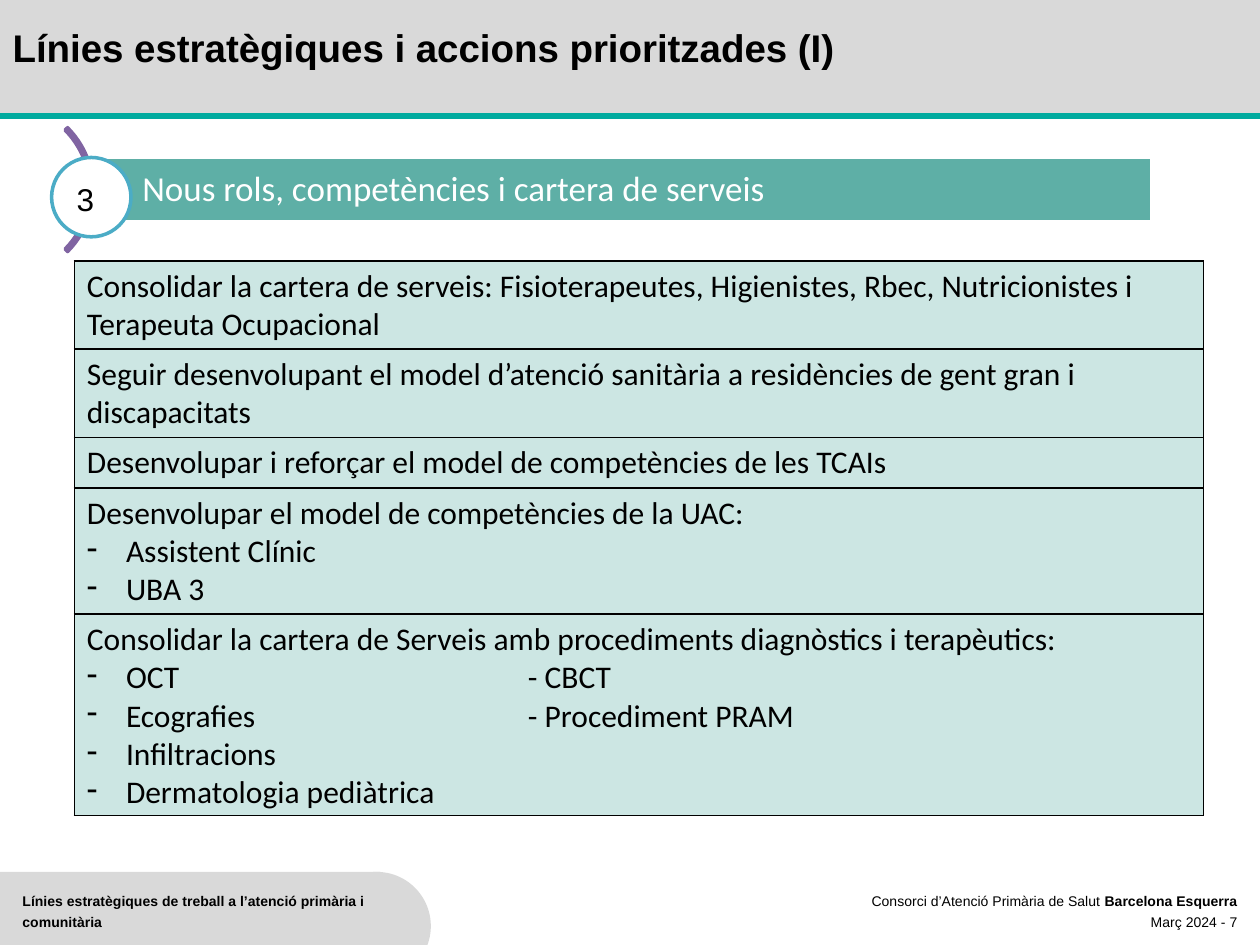
from lxml import etree
from pptx import Presentation
from pptx import util as u
from pptx.dml.color import RGBColor
from pptx.enum import shapes, text
from pptx.oxml import ns

BLACK = RGBColor(0x00, 0x00, 0x00)
WHITE = RGBColor(0xFF, 0xFF, 0xFF)
GREY = RGBColor(0xD9, 0xD9, 0xD9)
TEAL = RGBColor(0x00, 0xAA, 0x9E)
BAND = RGBColor(0x5E, 0xAF, 0xA6)
MINT = RGBColor(0xCC, 0xE6, 0xE3)
PURPLE = RGBColor(0x80, 0x64, 0xA2)
BLUE = RGBColor(0x4B, 0xAC, 0xC6)

deck = Presentation()
deck.slide_width, deck.slide_height = u.Inches(10), u.Inches(7.5)
COL, ROW = deck.slide_width / 100, deck.slide_height / 75
slide = deck.slides.add_slide(deck.slide_layouts[5])


def place(left, top, width, height):
    return int(left * COL), int(top * ROW), int(width * COL), int(height * ROW)


def write(paragraph, words, size, font="Arial", color=BLACK, bold=False):
    run = paragraph.add_run()
    run.text = words
    for name, value in {"name": font, "size": u.Pt(size), "bold": bold}.items():
        setattr(run.font, name, value)
    run.font.color.rgb = color


KIND = shapes.MSO_SHAPE
drawn = []
for kind, area, fill, edge in [
    (KIND.RECTANGLE, (0, 69.2, 30.2, 7.2), GREY, None),
    (KIND.OVAL, (25.6, 69.2, 8.6, 8.6), GREY, None),
    (KIND.RECTANGLE, (0, 0, 100, 9.2), GREY, None),
    (KIND.BLOCK_ARC, (-6.5, 8.1, 13.9, 13.9), None, PURPLE),
    (KIND.RECTANGLE, (7.2, 12.5, 84.2, 5.1), BAND, WHITE),
    (KIND.OVAL, (4.1, 12.5, 6.3, 6.3), WHITE, BLUE),
]:
    piece = slide.shapes.add_shape(kind, *place(*area))
    piece.shadow.inherit = False
    if fill is None:
        piece.fill.background()
    else:
        piece.fill.solid()
        piece.fill.fore_color.rgb = fill
    if edge is None:
        piece.line.fill.background()
    else:
        piece.line.color.rgb = edge
        piece.line.width = u.Pt(2)
    drawn.append(piece)

arc, band = drawn[3:5]
for index, amount in enumerate((189, 27, 0.02)):
    arc.adjustments[index] = amount

heading = band.text_frame
for name, value in {"margin_left": int(4.1 * COL), "margin_right": int(0.6 * COL),
                    "margin_top": int(0.6 * ROW), "margin_bottom": int(0.6 * ROW),
                    "vertical_anchor": text.MSO_ANCHOR.MIDDLE}.items():
    setattr(heading, name, value)
heading.paragraphs[0].alignment = text.PP_ALIGN.LEFT
heading.paragraphs[0].line_spacing = 0.9
write(heading.paragraphs[0], "Nous rols, competències i cartera de serveis", 20, "Calibri", WHITE)

rule = slide.shapes.add_connector(shapes.MSO_CONNECTOR.STRAIGHT, 0, int(9.2 * ROW),
                                  deck.slide_width, int(9.2 * ROW))
rule.line.color.rgb = TEAL
rule.line.width = u.Pt(3)
etree.SubElement(rule._element.spPr, ns.qn("a:effectLst"))

title = slide.shapes.title
slide.shapes._spTree.append(title._element)
title.left, title.top, title.width, title.height = place(0, 2, 85.3, 7.2)
title.text_frame.vertical_anchor = text.MSO_ANCHOR.TOP
title.text_frame.auto_size = text.MSO_AUTO_SIZE.NONE
title_line = title.text_frame.paragraphs[0]
title_line.alignment = text.PP_ALIGN.LEFT
title_line.line_spacing = u.Pt(22)
write(title_line, "Línies estratègiques i accions prioritzades (I)", 22, bold=True)

LEFT, RIGHT = text.PP_ALIGN.LEFT, text.PP_ALIGN.RIGHT
for area, align, spacing, size, lines in [
    ((0.8, 70, 30.2, 4.7), LEFT, u.Pt(12), 8,
     [[("Línies estratègiques de treball a l’atenció primària i comunitària", True)]]),
    ((67.5, 70, 31.7, 5), RIGHT, u.Pt(12), 8,
     [[("Consorci d’Atenció Primària de Salut ", False), ("Barcelona Esquerra", True)],
      [("Març 2024 - 7", False)]]),
    ((5.1, 13.8, 4.1, 4), LEFT, 1.0, 18, [[("3", False)]]),
]:
    frame = slide.shapes.add_textbox(*place(*area)).text_frame
    frame.word_wrap = True
    for index, pieces in enumerate(lines):
        paragraph = frame.add_paragraph() if index else frame.paragraphs[0]
        paragraph.alignment = align
        paragraph.line_spacing = spacing
        for words, bold in pieces:
            write(paragraph, words, size, bold=bold)

actions = [
    (7, ["Consolidar la cartera de serveis: Fisioterapeutes, Higienistes, Rbec, "
         "Nutricionistes i Terapeuta Ocupacional"]),
    (7, ["Seguir desenvolupant el model d’atenció sanitària a residències de gent gran i "
         "discapacitats"]),
    (4, ["Desenvolupar i reforçar el model de competències de les TCAIs"]),
    (10, ["Desenvolupar el model de competències de la UAC:", "Assistent Clínic", "UBA 3"]),
    (16, ["Consolidar la cartera de Serveis amb procediments diagnòstics i terapèutics:",
          "OCT\t- CBCT", "Ecografies\t- Procediment PRAM", "Infiltracions",
          "Dermatologia pediàtrica"]),
]
table = slide.shapes.add_table(len(actions), 1, *place(5.9, 20.7, 89.6, 44)).table
table.first_row = table.horz_banding = False
for row, (height, lines) in zip(table.rows, actions):
    row.height = int(height * ROW)
    cell = row.cells[0]
    cell_format = cell._tc.get_or_add_tcPr()
    for side in ("a:lnL", "a:lnR", "a:lnT", "a:lnB"):
        border = etree.SubElement(cell_format, ns.qn(side), w=str(u.Pt(1)))
        ink = etree.SubElement(border, ns.qn("a:solidFill"))
        etree.SubElement(ink, ns.qn("a:srgbClr"), val=str(BLACK))
    cell.fill.solid()
    cell.fill.fore_color.rgb = MINT
    for index, words in enumerate(lines):
        paragraph = cell.text_frame.add_paragraph() if index else cell.text_frame.paragraphs[0]
        if index:
            layout = paragraph._p.get_or_add_pPr()
            layout.set("marL", str(int(3.1 * COL)))
            layout.set("indent", str(int(-3.1 * COL)))
            etree.SubElement(layout, ns.qn("a:buChar"), char="-")
            if "\t" in words:
                stops = etree.SubElement(layout, ns.qn("a:tabLst"))
                etree.SubElement(stops, ns.qn("a:tab"), pos=str(int(35 * COL)), algn="l")
        write(paragraph, words, 18, "Calibri")

deck.save("out.pptx")
